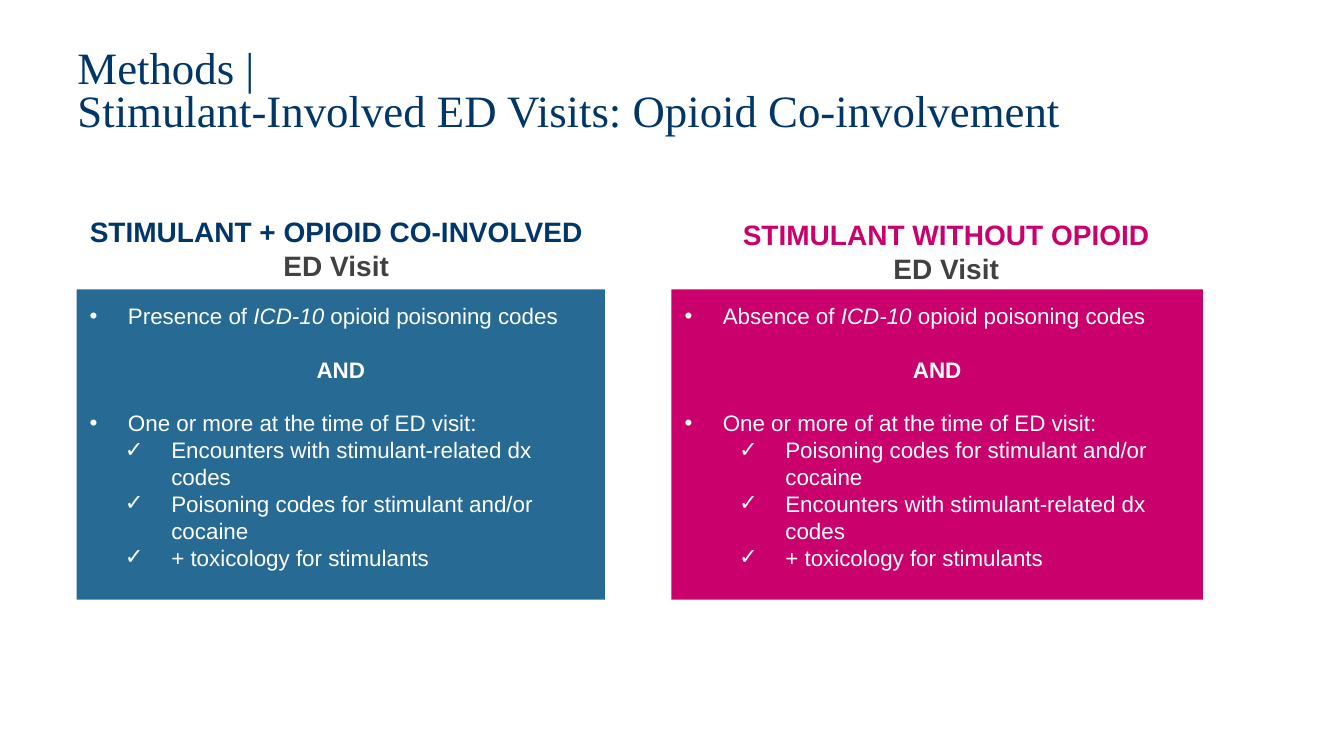
from pptx import Presentation
from pptx.dml.color import RGBColor
from pptx.enum.shapes import MSO_SHAPE
from pptx.enum.text import MSO_ANCHOR, PP_ALIGN
from pptx.util import Inches, Pt
from lxml.etree import SubElement
from pptx.oxml.ns import qn

NAVY, BLUE, PINK = "003768", "276B94", "CA006C"
GREY, WHITE = "414042", "FFFFFF"


def paint(text):
    return RGBColor.from_string(text)


def style(para, size, tint, face="Arial", bold=False):
    for run in para.runs:
        font = run.font
        font.name, font.size, font.bold = face, Pt(size), bold
        font.color.rgb = paint(tint)


def bullet(para, mark, left, hang):
    props = para._p.get_or_add_pPr()
    props.set("marL", str(Inches(left)))
    props.set("indent", str(-Inches(hang)))
    SubElement(props, qn("a:buFont")).set("typeface", "Arial")
    SubElement(props, qn("a:buChar")).set("char", mark)


def title(slide, text):
    box = slide.shapes.add_textbox(Inches(0.67), Inches(0.44), Inches(12), Inches(0.96))
    frame = box.text_frame
    frame.word_wrap = True
    frame.vertical_anchor = MSO_ANCHOR.MIDDLE
    para = frame.paragraphs[0]
    para.text = text
    para.line_spacing = 0.8
    style(para, 32, NAVY, "Times New Roman")


def header(slide, left, top, width, text, tint, wrap):
    box = slide.shapes.add_textbox(Inches(left), Inches(top), Inches(width), Inches(1.08))
    frame = box.text_frame
    frame.word_wrap = wrap
    frame.text = text + "\nED Visit"
    for para, shade in zip(frame.paragraphs, (tint, GREY)):
        para.alignment = PP_ALIGN.CENTER
        style(para, 20, shade, bold=True)


def panel(slide, left, width, fill, start, lead, items, level, inset):
    box = slide.shapes.add_shape(
        MSO_SHAPE.RECTANGLE, Inches(left), Inches(2.87), Inches(width), Inches(3.08)
    )
    box.shadow.inherit = False
    box.fill.solid()
    box.fill.fore_color.rgb = paint(fill)
    box.line.fill.background()
    frame = box.text_frame
    frame.word_wrap = True
    frame.vertical_anchor = MSO_ANCHOR.TOP
    frame.margin_left = frame.margin_right = Inches(0.13)
    frame.margin_top = frame.margin_bottom = Inches(0.13)
    frame.text = "\n".join([start, "AND", lead, *items])
    first, link, third, *checks = frame.paragraphs
    for part in ("ICD-10 ", "opioid poisoning codes"):
        first.add_run().text = part
    for para in frame.paragraphs:
        para.alignment = PP_ALIGN.LEFT
        style(para, 16, WHITE)
    first.runs[1].font.italic = True
    link.alignment = PP_ALIGN.CENTER
    link.runs[0].font.bold = True
    for para in (link, third):
        para.space_before = Pt(19)
    for para in (first, third):
        bullet(para, "•", 0.38, 0.38)
    for para in checks:
        para.level = level
        bullet(para, "✓", inset, 0.46)


def main():
    deck = Presentation()
    deck.slide_width, deck.slide_height = Inches(13.33), Inches(7.5)
    slide = deck.slides.add_slide(deck.slide_layouts[6])
    codes = "Encounters with stimulant-related dx codes"
    poison = "Poisoning codes for stimulant and/or cocaine"
    tox = "+ toxicology for stimulants"
    title(slide, "Methods |\nStimulant-Involved ED Visits: Opioid Co-involvement")
    panel(slide, 0.76, 5.24, BLUE, "Presence of ",
          "One or more at the time of ED visit:", [codes, poison, tox], 1, 0.81)
    panel(slide, 6.66, 5.27, PINK, "Absence of ",
          "One or more of at the time of ED visit:", [poison, codes, tox], 2, 1)
    header(slide, 0.67, 2.08, 5.33, "STIMULANT + OPIOID CO-INVOLVED", NAVY, True)
    header(slide, 7.25, 2.11, 4.27, "STIMULANT WITHOUT OPIOID", PINK, False)
    deck.save("out.pptx")


if __name__ == "__main__":
    main()
